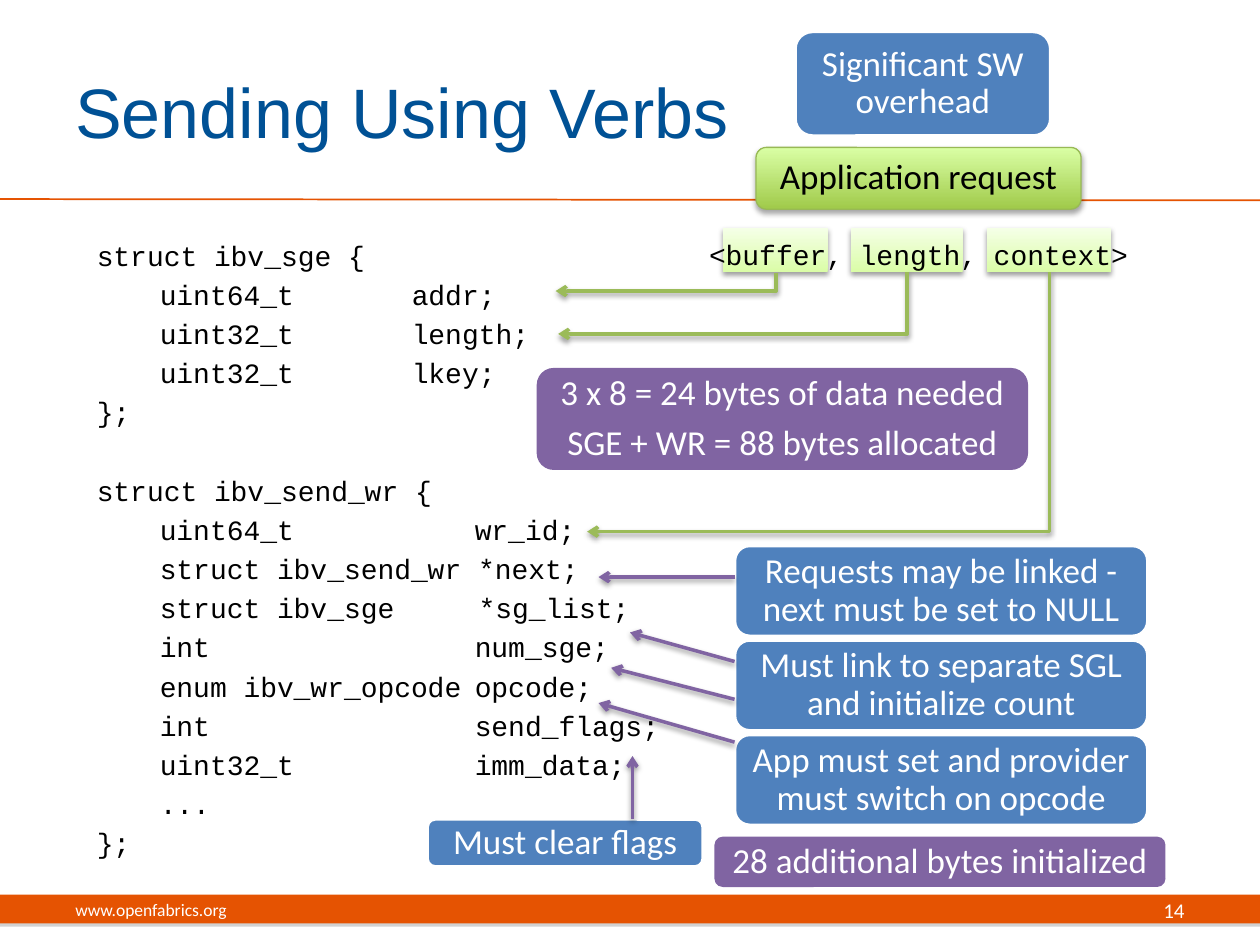
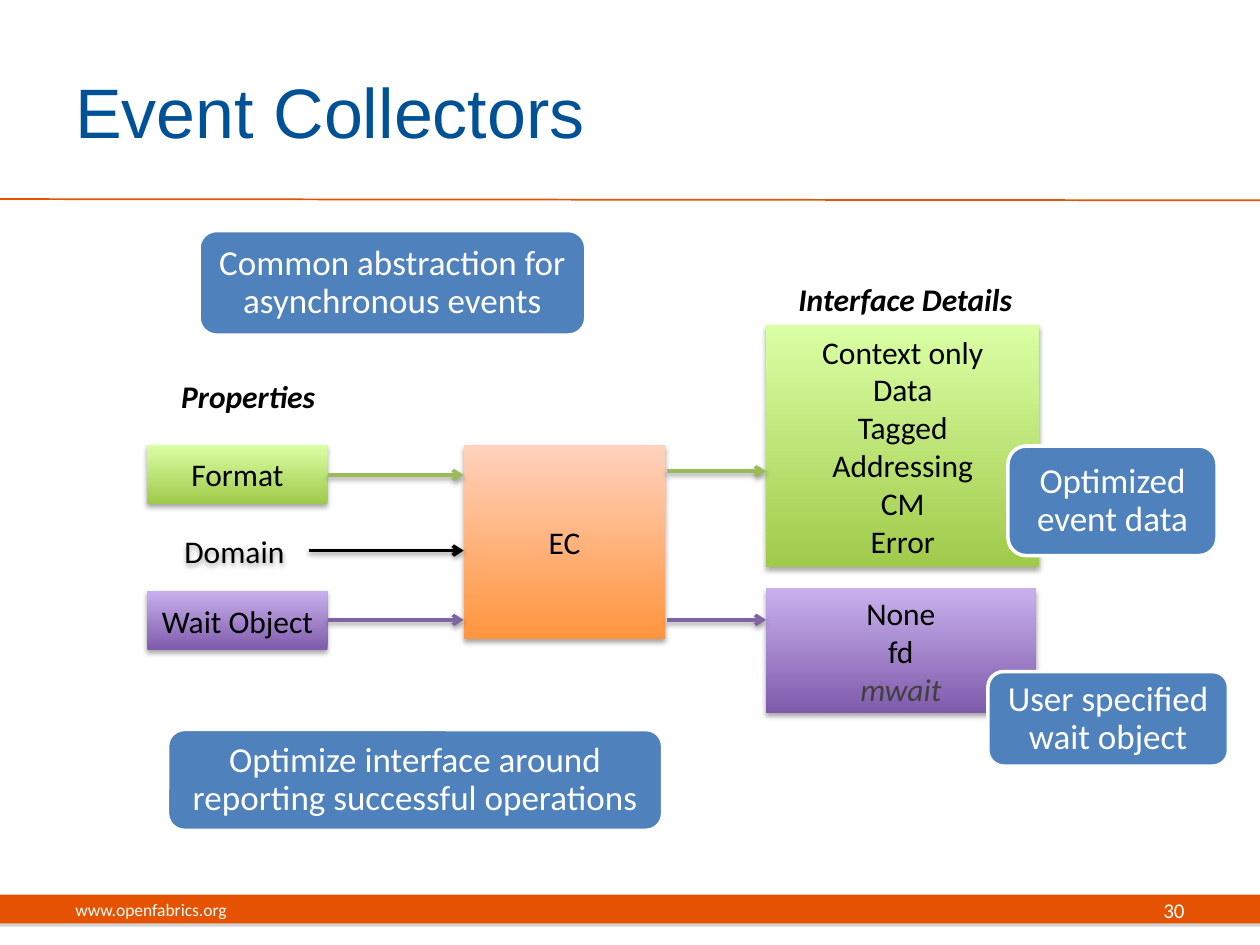
from dataclasses import dataclass, replace
from typing import NamedTuple

from lxml import etree
from pptx import Presentation
from pptx.dml.color import RGBColor
from pptx.enum.shapes import MSO_CONNECTOR, MSO_SHAPE
from pptx.enum.text import MSO_ANCHOR, PP_ALIGN
from pptx.oxml.ns import qn
from pptx.util import Inches, Pt

RECT, ROUNDED = MSO_SHAPE.RECTANGLE, MSO_SHAPE.ROUNDED_RECTANGLE
STRAIGHT, ELBOW = MSO_CONNECTOR.STRAIGHT, MSO_CONNECTOR.ELBOW
LEFT, CENTER, RIGHT = PP_ALIGN.LEFT, PP_ALIGN.CENTER, PP_ALIGN.RIGHT
TOP, MIDDLE = MSO_ANCHOR.TOP, MSO_ANCHOR.MIDDLE

COLORS = {
    "orange": "E55302", "title": "005195", "white": "FFFFFF", "black": "000000",
    "gray": "808080", "dark gray": "404040",
    "blue": "4F81BD", "purple": "8064A2", "green": "9BBB59", "green edge": "98B955",
}
# Bottom and top colour of each gradient
GRADIENTS = {
    "green": ("A0CA4A", "DAFFA5"),
    "pale green": ("DAFDA7", "F5FFE7"),
    "purple": ("7F5BAB", "C8B0ED"),
    "orange": ("FF953E", "FFD2BD"),
}


class Area(NamedTuple):
    left: float
    top: float
    width: float
    height: float


class Point(NamedTuple):
    x: float
    y: float


class Shadow(NamedTuple):
    color: str
    opacity: int
    blur: float
    distance: float


class Struct(NamedTuple):
    name: str
    name_column: float
    fields: list[tuple[str, str]]


@dataclass(frozen=True)
class TextStyle:
    size: float
    font: str = "Calibri"
    color: str = "black"
    align: PP_ALIGN = CENTER
    bold: bool = False
    italic: bool = False
    line_spacing: float = 1.0
    gap: float = 0


@dataclass(frozen=True)
class Callout:
    area: Area
    lines: tuple[str, ...]
    color: str = "blue"


@dataclass(frozen=True)
class Panel:
    area: Area
    gradient: str
    lines: tuple[str, ...] = ()


@dataclass(frozen=True)
class Arrow:
    start: Point
    end: Point
    color: str


TITLE = TextStyle(40, "Arial", "title", LEFT)
SITE = TextStyle(10, color="white", align=LEFT)
PAGE_NUMBER = TextStyle(12, color="white", align=RIGHT)
CALLOUT = TextStyle(20, color="white", line_spacing=0.9, gap=7)
BUTTON = replace(CALLOUT, color="black")
LABEL = TextStyle(18)
HEADING = replace(LABEL, bold=True, italic=True)
CODE = TextStyle(16, "Courier New", align=LEFT, gap=3.2)
CODE_LINE = 22.4
POINTER_SHIFT = 0.03

BAND_SHADOW = Shadow("gray", 35, 0, 1.8)
PANEL_SHADOW = Shadow("black", 35, 3.1, 1.8)
LINE_SHADOW = Shadow("black", 38, 3.1, 1.6)


def rgb(name: str) -> RGBColor:
    return RGBColor.from_string(COLORS[name])


def inches(values: tuple) -> list:
    return [Inches(value) for value in values]


def add_shadow(item, shadow: Shadow | None) -> None:
    """Replace the theme shadow by the given one, or by none."""
    properties = item._element.spPr
    for old in properties.findall(qn("a:effectLst")):
        properties.remove(old)
    effects = etree.SubElement(properties, qn("a:effectLst"))
    if shadow is None:
        return
    outer = etree.SubElement(
        effects, qn("a:outerShdw"), blurRad=str(Pt(shadow.blur)),
        dist=str(Pt(shadow.distance)), dir="5400000", rotWithShape="0")
    color = etree.SubElement(outer, qn("a:srgbClr"), val=COLORS[shadow.color])
    etree.SubElement(color, qn("a:alpha"), val=str(shadow.opacity * 1000))


def style_paragraph(para, style: TextStyle) -> None:
    para.alignment = style.align
    para.line_spacing = style.line_spacing
    font = para.font
    font.name, font.size = style.font, Pt(style.size)
    font.bold, font.italic = style.bold, style.italic
    font.color.rgb = rgb(style.color)


def write_lines(frame, lines: tuple[str, ...], style: TextStyle) -> None:
    for index, line in enumerate(lines):
        para = frame.add_paragraph() if index else frame.paragraphs[0]
        para.text = line
        if index:
            para.space_before = Pt(style.gap)
        style_paragraph(para, style)


def add_text(page, area: Area, text: str, style: TextStyle, anchor=MIDDLE):
    box = page.shapes.add_textbox(*inches(area))
    box.text_frame.word_wrap = True
    box.text_frame.vertical_anchor = anchor
    write_lines(box.text_frame, (text,), style)
    return box


def add_box(page, kind, area: Area, shadow: Shadow | None = None):
    box = page.shapes.add_shape(kind, *inches(area))
    box.line.fill.background()
    add_shadow(box, shadow)
    box.text_frame.word_wrap = True
    box.text_frame.vertical_anchor = MIDDLE
    return box


def fill_gradient(box, name: str) -> None:
    box.fill.gradient()
    box.fill.gradient_angle = 90
    for stop, color in zip(box.fill.gradient_stops, GRADIENTS[name]):
        stop.color.rgb = RGBColor.from_string(color)


def add_panel(page, panel: Panel, kind=RECT, style: TextStyle = LABEL):
    shadow = LINE_SHADOW if panel.gradient == "pale green" else PANEL_SHADOW
    box = add_box(page, kind, panel.area, shadow)
    fill_gradient(box, panel.gradient)
    write_lines(box.text_frame, panel.lines, style)
    return box


def add_callout(page, callout: Callout) -> None:
    box = add_box(page, ROUNDED, callout.area)
    box.fill.solid()
    box.fill.fore_color.rgb = rgb(callout.color)
    if callout.color == "blue":
        box.line.color.rgb = rgb("white")
        box.line.width = Pt(2)
    frame = box.text_frame
    frame.margin_left = frame.margin_right = Inches(0.07)
    frame.margin_top = frame.margin_bottom = Inches(0.04)
    write_lines(frame, callout.lines, CALLOUT)


def add_line(page, start: Point, end: Point, color: str, width: float, kind=STRAIGHT):
    line = page.shapes.add_connector(kind, *inches(start + end))
    line.line.color.rgb = rgb(color)
    line.line.width = Pt(width)
    add_shadow(line, None)
    return line


def finish_arrow(line) -> None:
    etree.SubElement(line.line._get_or_add_ln(), qn("a:tailEnd"), type="arrow")
    add_shadow(line, LINE_SHADOW)


def add_arrow(page, arrow: Arrow) -> None:
    finish_arrow(add_line(page, arrow.start, arrow.end, arrow.color, 2))


def add_bent_arrow(page, arrow: Arrow) -> None:
    """Draw an arrow that runs down, then left, as a quarter-turned elbow."""
    drop, run = arrow.end.y - arrow.start.y, arrow.start.x - arrow.end.x
    left = (arrow.start.x + arrow.end.x - drop) / 2
    top = (arrow.start.y + arrow.end.y - run) / 2
    line = add_line(page, Point(left, top), Point(left + drop, top + run),
                    arrow.color, 2, ELBOW)
    properties = line._element.spPr
    properties.find(qn("a:xfrm")).set("rot", "5400000")
    properties.find(qn("a:prstGeom")).set("prst", "bentConnector2")
    finish_arrow(line)


def add_structs(page, area: Area, structs: list[Struct]) -> None:
    frame = page.shapes.add_textbox(*inches(area)).text_frame
    frame.word_wrap = True
    for number, struct in enumerate(structs):
        rows = [f"\t{kind}\t{name}".rstrip() for kind, name in struct.fields]
        for index, row in enumerate([f"struct {struct.name} {{", *rows, "};"]):
            first = number == index == 0
            para = frame.paragraphs[0] if first else frame.add_paragraph()
            para.text = row
            if not first:
                para.space_before = Pt(CODE.gap if index else CODE.gap + CODE_LINE)
            column = struct.name_column + (POINTER_SHIFT if "\t*" in row else 0)
            tabs = etree.SubElement(para._p.get_or_add_pPr(), qn("a:tabLst"))
            for stop in (0.5, column):
                etree.SubElement(tabs, qn("a:tab"), pos=str(Inches(stop)), algn="l")
            style_paragraph(para, CODE)


def add_page(deck, title: str, number: int):
    page = deck.slides.add_slide(deck.slide_layouts[6])
    band = add_box(page, RECT, Area(0, 7.1, 10, 0.23), BAND_SHADOW)
    band.fill.solid()
    band.fill.fore_color.rgb = rgb("orange")
    add_line(page, Point(0, 1.58), Point(10, 1.59), "orange", 1)
    add_text(page, Area(0.5, 0.25, 8.17, 1.25), title, TITLE)
    add_text(page, Area(0.5, 7.02, 3.17, 0.4), "www.openfabrics.org", SITE)
    add_text(page, Area(7.17, 7.02, 2.33, 0.4), str(number), PAGE_NUMBER)
    return page


def build_sending_page(deck) -> None:
    page = add_page(deck, "Sending Using Verbs", 14)
    for left, width in ((5.74, 0.83), (6.75, 0.89), (7.83, 0.99)):
        add_panel(page, Panel(Area(left, 1.81, width, 0.35), "pale green"))
    add_structs(page, Area(0.67, 1.84, 9, 5.08), [
        Struct("ibv_sge", 2.5, [
            ("uint64_t", "addr;"), ("uint32_t", "length;"), ("uint32_t", "lkey;")]),
        Struct("ibv_send_wr", 3, [
            ("uint64_t", "wr_id;"), ("struct ibv_send_wr *next;", ""),
            ("struct ibv_sge", "*sg_list;"), ("int", "num_sge;"),
            ("enum ibv_wr_opcode", "opcode;"), ("int", "send_flags;"),
            ("uint32_t", "imm_data;"), ("...", "")]),
    ])
    request = Panel(Area(6, 1.17, 2.58, 0.49), "green", ("Application request",))
    button = add_panel(page, request, ROUNDED, BUTTON)
    button.line.color.rgb = rgb("green edge")
    button.line.width = Pt(0.75)
    add_text(page, Area(5.08, 1.84, 4.42, 0.47), "<buffer, length, context>",
             replace(CODE, align=CENTER), TOP)
    for start, end in ((Point(6.16, 2.17), Point(4.41, 2.31)),
                       (Point(7.2, 2.16), Point(4.43, 2.65)),
                       (Point(8.33, 2.16), Point(4.66, 4.22))):
        add_bent_arrow(page, Arrow(start, end, "green"))

    costs = ("Requests may be linked - next must be set to NULL",
             "Must link to separate SGL and initialize count",
             "App must set and provider must switch on opcode")
    for index, cost in enumerate(costs):
        add_callout(page, Callout(Area(5.83, 4.33 + 0.75 * index, 3.28, 0.72), (cost,)))
    for callout in (
        Callout(Area(4.26, 2.92, 3.9, 0.81),
                ("3 x 8 = 24 bytes of data needed", "SGE + WR = 88 bytes allocated"), "purple"),
        Callout(Area(3.39, 6.5, 2.19, 0.38), ("Must clear flags",)),
        Callout(Area(5.67, 6.64, 3.58, 0.4), ("28 additional bytes initialized",), "purple"),
        Callout(Area(6.31, 0.25, 2.03, 0.83), ("Significant SW overhead",)),
    ):
        add_callout(page, callout)
    for start, end in ((Point(5.83, 4.58), Point(4.75, 4.58)),
                       (Point(5.83, 5.25), Point(5, 5.02)),
                       (Point(5.83, 5.55), Point(4.85, 5.3)),
                       (Point(5.83, 5.89), Point(4.75, 5.58)),
                       (Point(5.02, 6.5), Point(5.02, 6))):
        add_arrow(page, Arrow(start, end, "purple"))


def build_collectors_page(deck) -> None:
    page = add_page(deck, "Event Collectors", 30)
    domain = add_text(page, Area(1.27, 4.16, 1.18, 0.42), "Domain", LABEL)
    add_shadow(domain, PANEL_SHADOW)
    add_text(page, Area(1.17, 2.93, 1.6, 0.43), "Properties", HEADING)
    add_text(page, Area(6.1, 2.17, 2.17, 0.41), "Interface Details", HEADING)
    details = ("Context only", "Data", "Tagged", "Addressing", "CM", "Error")
    for panel in (Panel(Area(1.17, 3.53, 1.43, 0.47), "green", ("Format",)),
                  Panel(Area(1.17, 4.69, 1.43, 0.47), "purple", ("Wait Object",)),
                  Panel(Area(3.68, 3.53, 1.6, 1.54), "orange", ("EC",)),
                  Panel(Area(6.08, 2.58, 2.17, 1.92), "green", details)):
        add_panel(page, panel)
    wait_kinds = Panel(Area(6.08, 4.67, 2.14, 0.99), "purple", ("None", "fd", "mwait"))
    planned = add_panel(page, wait_kinds).text_frame.paragraphs[-1]
    style_paragraph(planned, replace(LABEL, color="dark gray", italic=True))
    for left, right, y, color in ((2.45, 3.68, 4.37, "black"), (2.6, 3.68, 3.77, "green"),
                                  (2.6, 3.68, 4.92, "purple"), (5.29, 6.08, 3.74, "green"),
                                  (5.29, 6.08, 4.92, "purple")):
        add_arrow(page, Arrow(Point(left, y), Point(right, y), color))
    for area, text in (
        (Area(1.58, 1.83, 3.07, 0.83), "Common abstraction for asynchronous events"),
        (Area(7.84, 5.33, 1.91, 0.75), "User specified wait object"),
        (Area(8, 3.54, 1.66, 0.87), "Optimized event data"),
        (Area(1.33, 5.79, 3.93, 0.8), "Optimize interface around reporting successful operations"),
    ):
        add_callout(page, Callout(area, (text,)))


def main() -> None:
    deck = Presentation()
    deck.slide_width, deck.slide_height = Inches(10), Inches(7.5)
    build_sending_page(deck)
    build_collectors_page(deck)
    deck.save("out.pptx")


if __name__ == "__main__":
    main()
